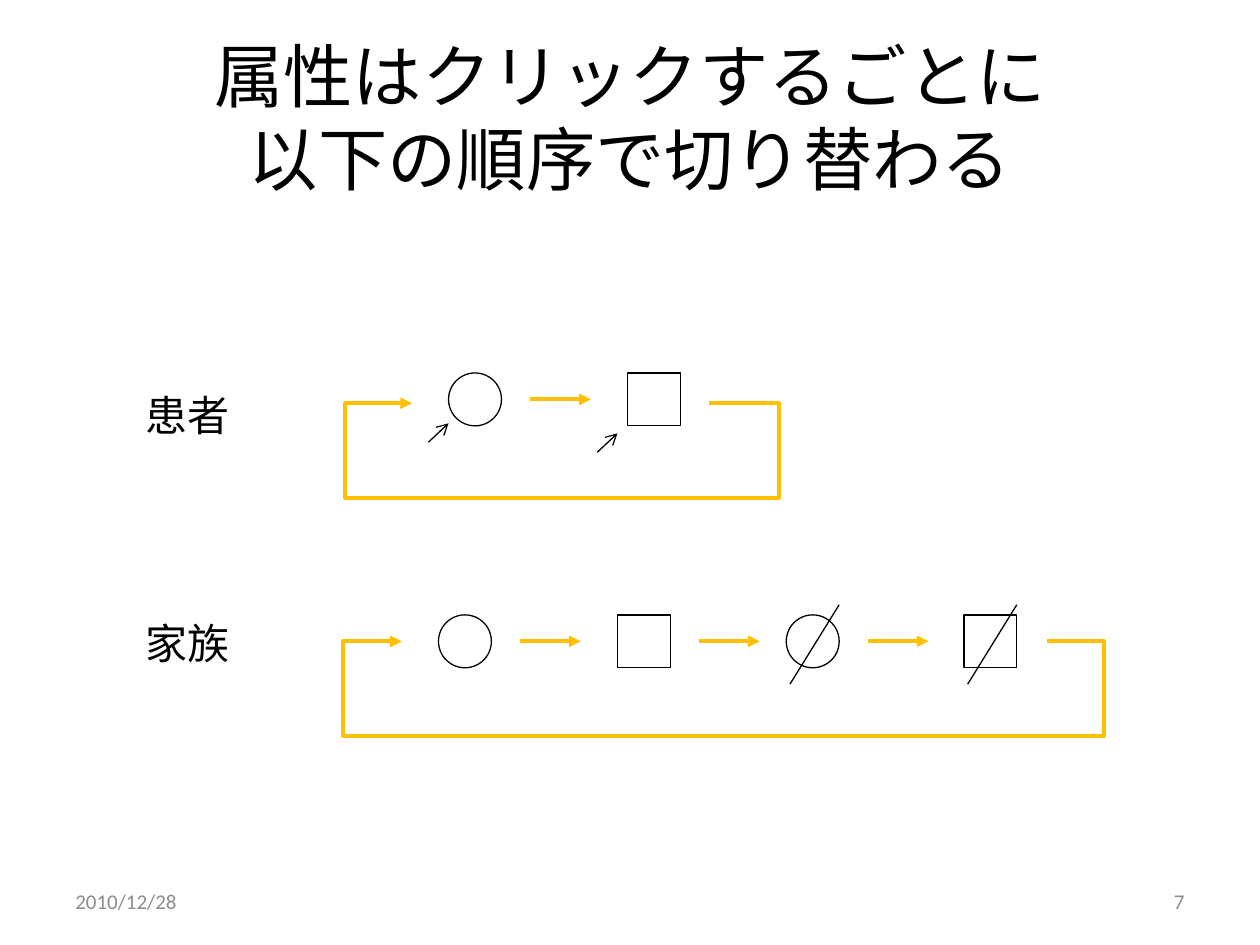
import pptx
import pptx.util
import pptx.dml.color
import pptx.enum.shapes
import pptx.enum.text
import pptx.oxml
import pptx.oxml.ns
import lxml.etree

Inches = pptx.util.Inches
Pt = pptx.util.Pt
SHAPE = pptx.enum.shapes.MSO_SHAPE
CONNECTOR = pptx.enum.shapes.MSO_CONNECTOR
ALIGN = pptx.enum.text.PP_ALIGN
ANCHOR = pptx.enum.text.MSO_ANCHOR
qn = pptx.oxml.ns.qn

COLORS = {"ink": "000000", "flow": "FFC000", "footer": "8C8C8C"}
FONT = "Calibri"
SYMBOL = 0.42
ARROW = 0.48
LOOP_DROP = 0.75


def rgb(name):
    return pptx.dml.color.RGBColor.from_string(COLORS[name])


def add_text(slide, box, lines, size, color="ink", align=ALIGN.LEFT,
             anchor=ANCHOR.MIDDLE, wrap=True):
    frame = slide.shapes.add_textbox(*map(Inches, box)).text_frame
    frame.word_wrap = wrap
    frame.vertical_anchor = anchor
    paragraph = frame.paragraphs[0]
    paragraph.alignment = align
    for index, line in enumerate(lines):
        if index:
            paragraph.add_line_break()
        run = paragraph.add_run()
        run.text = line
        run.font.size = Pt(size)
        run.font.name = FONT
        run.font.color.rgb = rgb(color)
        east_asian = lxml.etree.SubElement(run.font._element, qn("a:ea"))
        east_asian.set("typeface", FONT)


def add_line(slide, start, end, color, width, head=None, kind=CONNECTOR.STRAIGHT):
    line = slide.shapes.add_connector(kind, *map(Inches, (*start, *end)))
    line.line.color.rgb = rgb(color)
    line.line.width = Pt(width)
    if head:
        tail = lxml.etree.SubElement(line.line._get_or_add_ln(), qn("a:tailEnd"))
        tail.set("type", head)
    lxml.etree.SubElement(line._element.spPr, qn("a:effectLst"))
    return line


def add_bend(slide, start, end, via_x, head=None):
    bend = add_line(slide, end, start, "flow", 2.25, head, CONNECTOR.ELBOW)
    properties = bend._element.spPr
    properties.find(qn("a:xfrm")).set("rot", "10800000")
    geometry = properties.find(qn("a:prstGeom"))
    adjustments = geometry.find(qn("a:avLst"))
    if adjustments is None:
        adjustments = lxml.etree.SubElement(geometry, qn("a:avLst"))
    ratio = (via_x - start[0]) / (end[0] - start[0])
    guide = lxml.etree.SubElement(adjustments, qn("a:gd"))
    guide.set("name", "adj1")
    guide.set("fmla", f"val {round(ratio * 100000)}")


def add_symbol(slide, left, top, outline):
    symbol = slide.shapes.add_shape(
        outline, *map(Inches, (left, top, SYMBOL, SYMBOL)))
    symbol.shadow.inherit = False
    symbol.fill.background()
    symbol.line.color.rgb = rgb("ink")
    symbol.line.width = Pt(0.75)


def add_loop(slide, left, top, right, entry, leave, gap):
    bottom = top + LOOP_DROP
    gap_left, gap_right = gap
    add_bend(slide, (leave, top), (gap_right, bottom), right)
    add_line(slide, (gap_right, bottom), (gap_left, bottom), "flow", 2.25)
    add_bend(slide, (gap_left, bottom), (entry, top), left, "triangle")


def add_cycle(slide, left, top, label, label_drop, symbols, arrows, loop_drop, loop):
    add_text(slide, (left, top + label_drop, 0.88, 0.5), [label], 24,
             anchor=ANCHOR.TOP, wrap=False)
    for offset, outline, pointer, deceased in symbols:
        x = left + offset
        add_symbol(slide, x, top, outline)
        if pointer:
            tip_x, tip_y = x + pointer[0], top + pointer[1]
            add_line(slide, (tip_x - 0.16, tip_y + 0.15), (tip_x, tip_y),
                     "ink", 0.75, "arrow")
        if deceased:
            add_line(slide, (x + SYMBOL, top - 0.08), (x + 0.03, top + 0.55),
                     "ink", 0.75)
    middle = top + SYMBOL / 2
    for offset in arrows:
        x = left + offset
        add_line(slide, (x, middle), (x + ARROW, middle), "flow", 2.25, "triangle")
    loop_left, loop_right, entry, leave, gap_left, gap_right = (
        left + offset for offset in loop)
    add_loop(slide, loop_left, top + loop_drop, loop_right, entry, leave,
             (gap_left, gap_right))


def add_title(slide, left, top, width, height):
    add_text(slide, (left, top, width, height),
             ["属性はクリックするごとに", "以下の順序で切り替わる"], 39.6,
             align=ALIGN.CENTER)


def add_footer(slide, left, top, width, height):
    field = 2.33
    add_text(slide, (left, top, field, height), ["2010/12/28"], 12, "footer")
    add_text(slide, (left + width - field, top, field, height), ["7"], 12,
             "footer", ALIGN.RIGHT)


def main():
    deck = pptx.Presentation()
    deck.slide_width, deck.slide_height = Inches(10), Inches(7.5)
    slide = deck.slides.add_slide(deck.slide_layouts[6])
    add_title(slide, 0.5, 0.3, 9, 1.25)
    add_cycle(
        slide, 1.06, 2.96, "患者", 0.08,
        symbols=[(2.5, SHAPE.OVAL, (0, 0.4), False),
                 (3.92, SHAPE.RECTANGLE, (-0.08, 0.48), False)],
        arrows=[3.15], loop_drop=0.24,
        loop=(1.68, 5.12, 2.21, 4.57, 3.07, 3.78))
    add_cycle(
        slide, 1.06, 4.88, "家族", -0.03,
        symbols=[(2.42, SHAPE.OVAL, None, False),
                 (3.84, SHAPE.RECTANGLE, None, False),
                 (5.18, SHAPE.OVAL, None, True),
                 (6.59, SHAPE.RECTANGLE, None, True)],
        arrows=[3.07, 4.49, 5.83], loop_drop=0.21,
        loop=(1.66, 7.7, 2.13, 7.25, 4.33, 5.04))
    add_footer(slide, 0.5, 6.95, 9, 0.4)
    deck.save("out.pptx")


if __name__ == "__main__":
    main()
